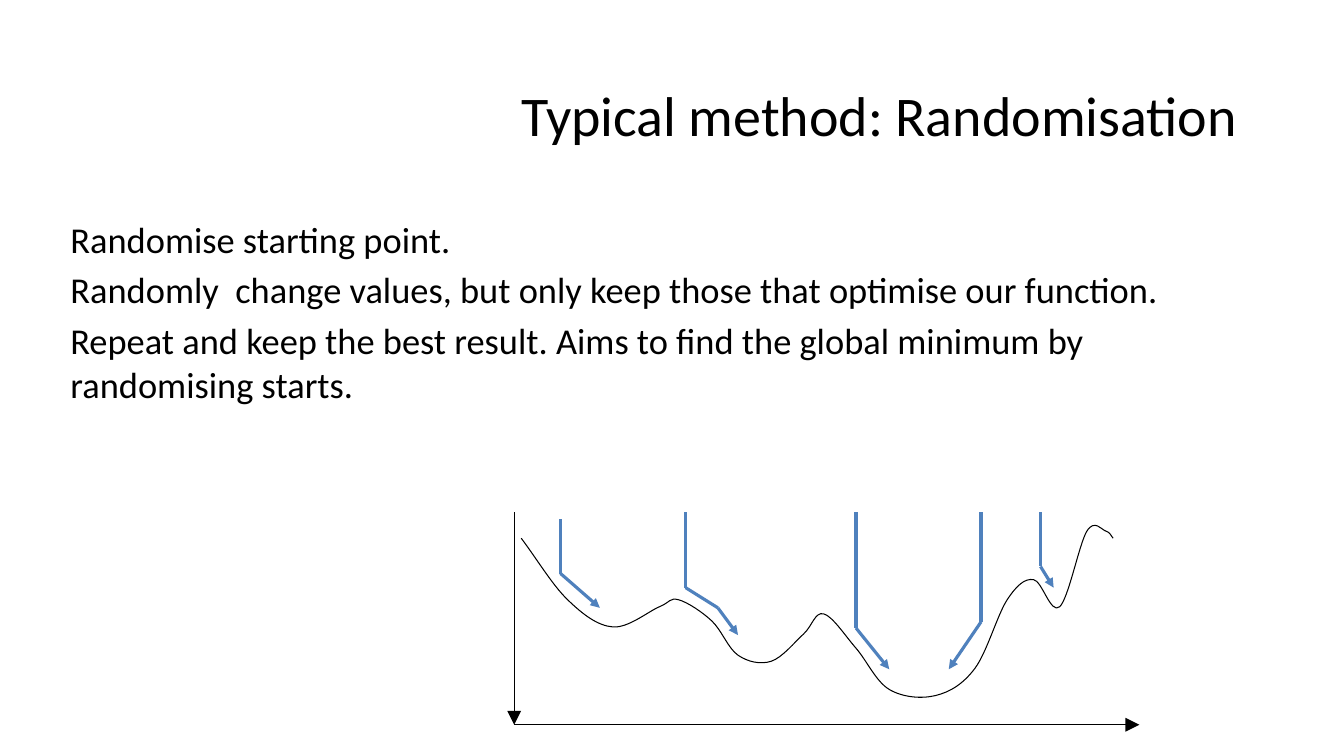
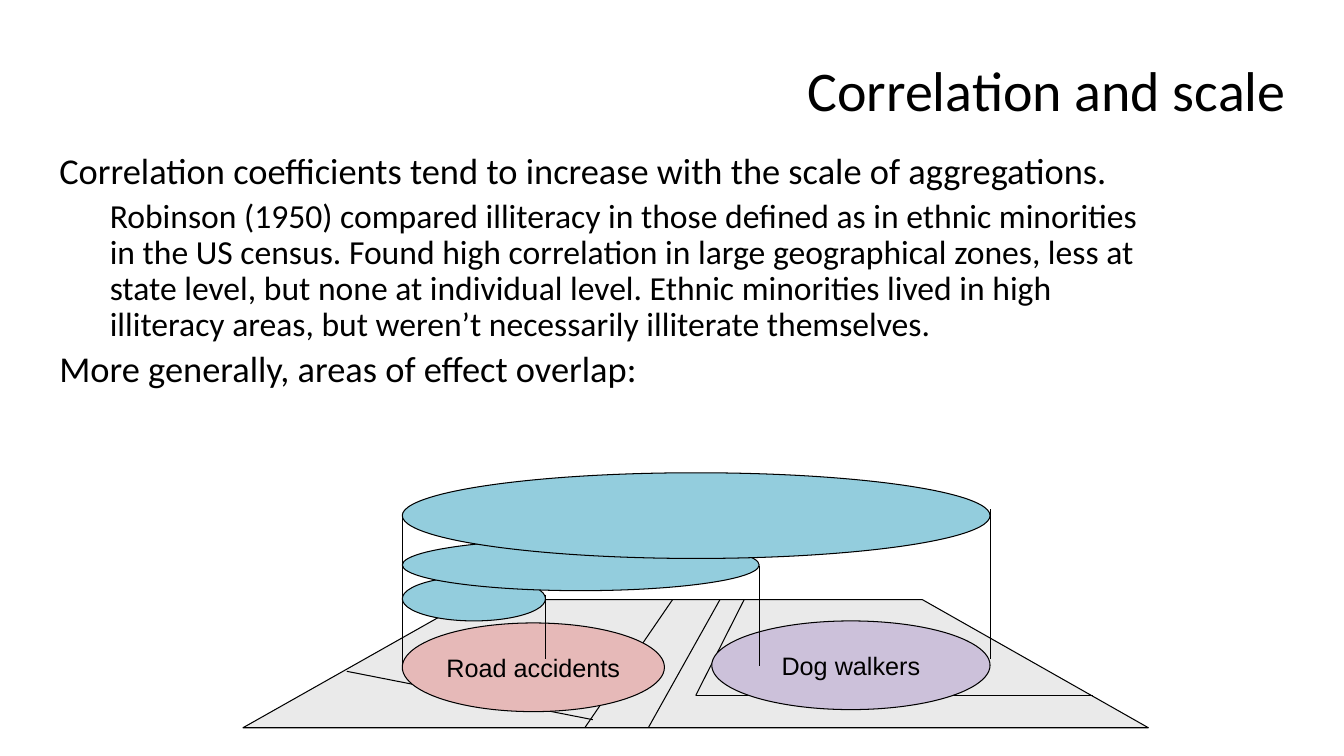
from dataclasses import dataclass

from lxml.etree import SubElement
from pptx import Presentation
from pptx.dml.color import RGBColor
from pptx.enum.shapes import MSO_CONNECTOR, MSO_SHAPE
from pptx.enum.text import MSO_ANCHOR, PP_ALIGN
from pptx.oxml.ns import qn
from pptx.util import Inches, Pt

BLACK = RGBColor(0x00, 0x00, 0x00)
ARROW_BLUE = RGBColor(0x4F, 0x81, 0xBD)
GROUND_GREY = RGBColor(0xEA, 0xEA, 0xEA)
ROSE = RGBColor(0xE6, 0xB9, 0xB8)
LILAC = RGBColor(0xCC, 0xC1, 0xDA)
AQUA = RGBColor(0x93, 0xCD, 0xDD)

THIN, THICK = 0.75, 2.25

TITLE_FONT = {"name": "Calibri", "size": Pt(40)}
LABEL_FONT = {"name": "Arial", "size": Pt(18)}
BODY_SIZES = (26, 24)
LEVEL_INDENT = 0.5


@dataclass
class Box:
    """A region in inches; its parts are placed relative to its top left."""
    left: float
    top: float
    width: float
    height: float

    def point(self, x, y):
        return Inches(self.left + x), Inches(self.top + y)

    def extent(self):
        return (*self.point(0, 0), Inches(self.width), Inches(self.height))

    def inner(self, x, y, width, height):
        return Box(self.left + x, self.top + y, width, height)


def apply_format(target, values):
    for name, value in values.items():
        setattr(target, name, value)


def add_span(para, text, font):
    span = para.add_run()
    span.text = text
    apply_format(span.font, font)
    span.font.color.rgb = BLACK


def add_text_frame(page, box, anchor):
    frame = page.shapes.add_textbox(*box.extent()).text_frame
    apply_format(frame, {"word_wrap": True, "vertical_anchor": anchor})
    return frame


def add_title(page, box, text):
    para = add_text_frame(page, box, MSO_ANCHOR.MIDDLE).paragraphs[0]
    para.alignment = PP_ALIGN.RIGHT
    add_span(para, text, TITLE_FONT)


def add_body(page, box, items, line_spacing=1.0):
    """Write (level, text) items as unbulleted paragraphs."""
    frame = add_text_frame(page, box, MSO_ANCHOR.TOP)
    for index, (level, text) in enumerate(items):
        para = frame.add_paragraph() if index else frame.paragraphs[0]
        size = BODY_SIZES[level]
        apply_format(para, {
            "level": level,
            "line_spacing": line_spacing,
            "space_before": Pt(size * 0.2),
        })
        para._p.get_or_add_pPr().set("marL", str(Inches(LEVEL_INDENT * level)))
        add_span(para, text, {"name": "Calibri", "size": Pt(size)})


def style_shape(shape, fill=None):
    shape.shadow.inherit = False
    if fill is None:
        shape.fill.background()
    else:
        shape.fill.solid()
        shape.fill.fore_color.rgb = fill
    shape.line.color.rgb = BLACK
    shape.line.width = Pt(THIN)


def add_line(page, box, start, end, color=BLACK, width=THIN, arrow=None):
    """Draw a line; arrow is the size of its head, "med" or "lg"."""
    line = page.shapes.add_connector(
        MSO_CONNECTOR.STRAIGHT, *box.point(*start), *box.point(*end))
    line.line.color.rgb = color
    line.line.width = Pt(width)
    if arrow:
        SubElement(line.line._get_or_add_ln(), qn("a:tailEnd"),
                   type="triangle", w=arrow, len=arrow)
    SubElement(line._element.spPr, qn("a:effectLst"))


def add_outline(page, box, points, close, fill=None):
    start, *rest = [box.point(*point) for point in points]
    builder = page.shapes.build_freeform(*start)
    builder.add_line_segments(rest, close=close)
    outline = builder.convert_to_shape()
    style_shape(outline, fill)
    return outline


def curve_points(knots):
    """Return the knots with two Bezier control points between neighbours."""
    def mirror(end, neighbour):
        return tuple(2 * a - b for a, b in zip(end, neighbour))

    def control(knot, before, after):
        return tuple(k + (a - b) / 6 for k, b, a in zip(knot, before, after))

    chain = [mirror(knots[0], knots[1]), *knots, mirror(knots[-1], knots[-2])]
    points = [knots[0]]
    for before, start, end, after in zip(chain, chain[1:], chain[2:], chain[3:]):
        points += [control(start, before, end), control(end, after, start), end]
    return points


def add_curve(page, box, knots):
    """Draw a smooth open curve by joining every three segments into one."""
    curve = add_outline(page, box, curve_points(knots), close=False)
    outline = next(curve._element.iter(qn("a:path")))
    segments = outline.findall(qn("a:lnTo"))
    for first in range(0, len(segments), 3):
        bezier = SubElement(outline, qn("a:cubicBezTo"))
        for segment in segments[first:first + 3]:
            bezier.append(segment[0])
            outline.remove(segment)


def add_ellipse(page, box, fill, label=None):
    ellipse = page.shapes.add_shape(MSO_SHAPE.OVAL, *box.extent())
    style_shape(ellipse, fill)
    if label:
        frame = ellipse.text_frame
        apply_format(frame, {"word_wrap": False,
                             "vertical_anchor": MSO_ANCHOR.MIDDLE})
        para = frame.paragraphs[0]
        para.alignment = PP_ALIGN.CENTER
        add_span(para, label, LABEL_FONT)


def draw_descent_chart(page, box):
    """Draw a function with several minima and arrows descending into them."""
    origin = (0, box.height)
    add_line(page, box, (0, 0), origin, arrow="lg")
    add_line(page, box, origin, (box.width, box.height), arrow="lg")

    add_curve(page, box, [
        (0.07, 0.26), (0.53, 0.87), (0.98, 1.14), (1.44, 0.94), (1.63, 0.87),
        (1.96, 1.08), (2.22, 1.42), (2.55, 1.48), (2.87, 1.21), (3.07, 1.01),
        (3.39, 1.35), (3.72, 1.76), (4.18, 1.82), (4.57, 1.55), (4.89, 0.87),
        (5.15, 0.67), (5.41, 0.94), (5.68, 0.19), (5.87, 0.19), (5.94, 0.26),
    ])

    descents = [
        [(0.46, 0.07), (0.46, 0.61), (0.85, 0.95)],
        [(1.7, 0), (1.7, 0.75), (2.02, 0.95), (2.22, 1.22)],
        [(3.39, 0), (3.39, 1.15), (3.72, 1.56)],
        [(4.63, 0), (4.63, 1.09), (4.31, 1.56)],
        [(5.22, 0), (5.22, 0.54), (5.35, 0.75)],
    ]
    for descent in descents:
        for start, end in zip(descent, descent[1:]):
            add_line(page, box, start, end, ARROW_BLUE, THICK,
                     arrow="med" if end == descent[-1] else None)


def draw_overlap_map(page, box):
    """Draw a street plan with areas of effect floating above it."""
    horizon, front = 1.26, box.height
    ground = [(0, front), (2.25, horizon), (6.74, horizon), (box.width, front)]
    add_outline(page, box, ground, close=True, fill=GROUND_GREY)

    corner = (4.49, 2.21)
    roads = [
        ((3.39, front), (4.26, horizon)),
        ((4.02, front), (4.73, horizon)),
        ((4.97, horizon), corner),
        (corner, (8.43, 2.21)),
        ((1.03, 1.97), (3.47, 2.45)),
    ]
    for start, end in roads:
        add_line(page, box, start, end)

    left_edge = 1.58
    add_ellipse(page, box.inner(left_edge, 1.49, 2.6, 0.88), ROSE,
                "Road accidents")
    add_ellipse(page, box.inner(4.65, 1.47, 2.76, 0.88), LILAC, "Dog walkers")
    for top, width, height in [(1.03, 1.42, 0.44), (0.66, 3.54, 0.51),
                               (0, 5.83, 0.85)]:
        add_ellipse(page, box.inner(left_edge, top, width, height), AQUA)

    drops = [(0, 1.21, 1.92), (1.42, 1.21, 1.85), (0, 0.86, 1.28),
             (0, 0.43, 0.93), (3.54, 0.93, 1.92), (5.83, 0.36, 1.85)]
    for offset, top, bottom in drops:
        x = left_edge + offset
        add_line(page, box, (x, top), (x, bottom))


def build_randomisation(page):
    add_title(page, Box(2.89, 0.47, 9.48, 1.33),
              "Typical method: Randomisation")
    add_body(page, Box(0.6, 2.1, 11.97, 2.98), [
        (0, "Randomise starting point."),
        (0, "Randomly  change values, but only keep those that optimise our "
            "function."),
        (0, "Repeat and keep the best result. Aims to find the global minimum "
            "by randomising starts."),
    ])
    draw_descent_chart(page, Box(5.1, 5.08, 6.2, 2.11))


def build_correlation(page):
    add_title(page, Box(3.6, 0.05, 9.25, 1.67), "Correlation and scale")
    add_body(page, Box(0.49, 1.47, 11.18, 3.07), [
        (0, "Correlation coefficients tend to increase with the scale of "
            "aggregations."),
        (1, "Robinson (1950) compared illiteracy in those defined as in ethnic "
            "minorities in the US census. Found high correlation in large "
            "geographical zones, less at state level, but none at individual "
            "level. Ethnic minorities lived in high illiteracy areas, but "
            "weren’t necessarily illiterate themselves."),
        (0, "More generally, areas of effect overlap:"),
    ], line_spacing=0.9)
    draw_overlap_map(page, Box(2.41, 4.69, 8.98, 2.53))


def main():
    deck = Presentation()
    apply_format(deck, {"slide_width": Inches(13.33),
                        "slide_height": Inches(7.5)})
    blank = deck.slide_layouts[6]
    for build in (build_randomisation, build_correlation):
        build(deck.slides.add_slide(blank))
    deck.save("out.pptx")


if __name__ == "__main__":
    main()
